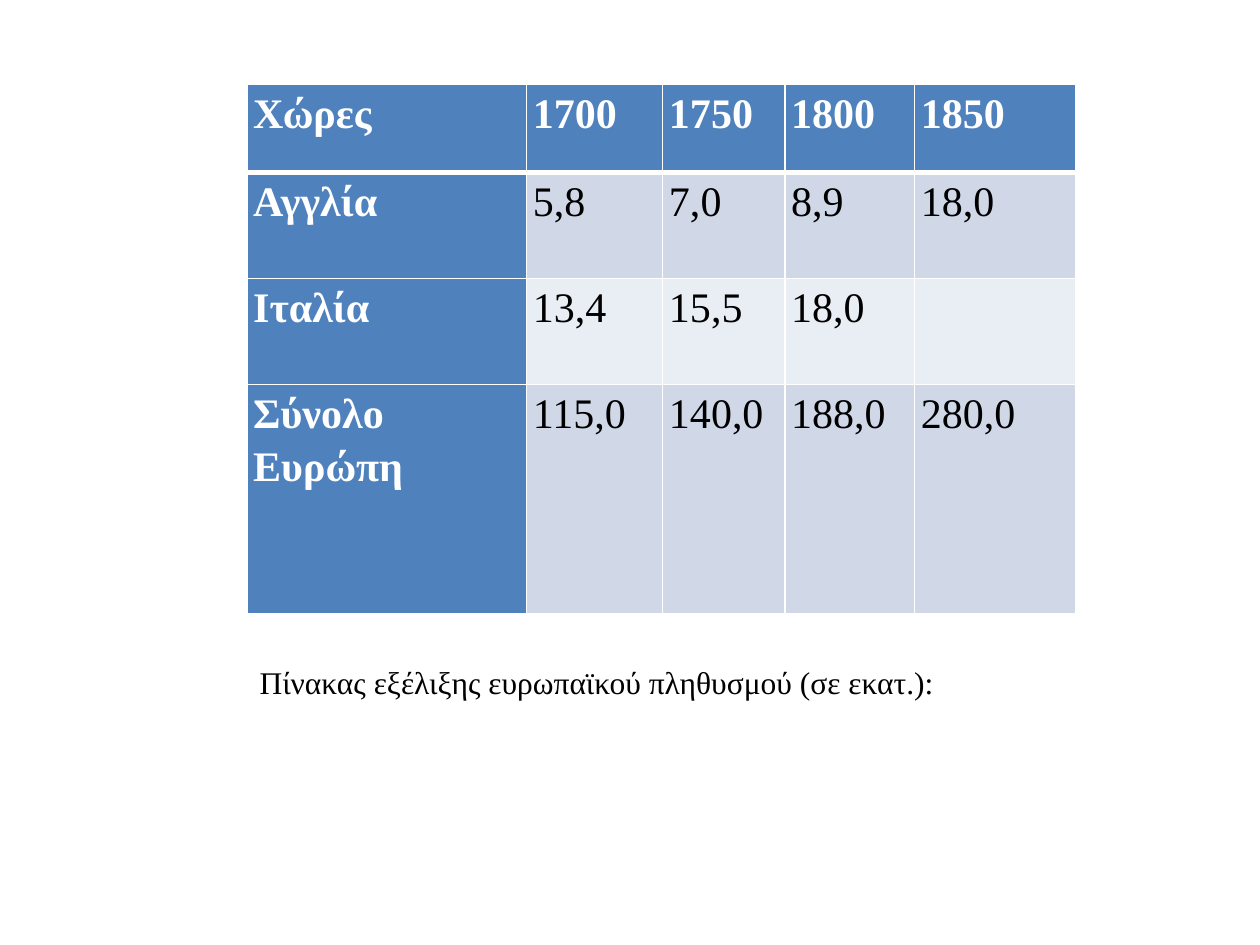
"""Build a slide with a table of European population from 1700 to 1850."""
import lxml.etree
import pptx
import pptx.dml.color
import pptx.enum.text
import pptx.oxml.ns
import pptx.util

Inches = pptx.util.Inches
Pt = pptx.util.Pt

COLORS = {
    "header": "4F81BD",
    "odd": "D0D8E8",
    "even": "E9EDF4",
    "light": "FFFFFF",
    "dark": "000000",
}
POPULATION = [
    ["Χώρες", "1700", "1750", "1800", "1850"],
    ["Αγγλία", "5,8", "7,0", "8,9", "18,0"],
    ["Ιταλία", "13,4", "15,5", "18,0", ""],
    ["Σύνολο Ευρώπη", "115,0", "140,0", "188,0", "280,0"],
]
COLUMN_WIDTHS = [2.22, 1.08, 0.97, 1.03, 1.28]
ROW_HEIGHTS = [0.7, 0.84, 0.84, 1.82]


class SlideBuilder:
    def __init__(self, slide, font_name="Times New Roman"):
        self.slide = slide
        self.font_name = font_name

    def color(self, key):
        return pptx.dml.color.RGBColor.from_string(COLORS[key])

    def format_font(self, paragraph, size, color, bold=False):
        font = paragraph.font
        font.name = self.font_name
        font.size = Pt(size)
        font.bold = bold
        font.color.rgb = self.color(color)

    def title(self, text, left, top, width, height):
        title = self.slide.shapes.title
        title.left, title.top = Inches(left), Inches(top)
        title.width, title.height = Inches(width), Inches(height)
        frame = title.text_frame
        frame.text = text
        frame.word_wrap = True
        frame.auto_size = pptx.enum.text.MSO_AUTO_SIZE.NONE
        frame.vertical_anchor = pptx.enum.text.MSO_ANCHOR.TOP
        frame.margin_top = Inches(0.01)
        caption = frame.paragraphs[0]
        caption.alignment = pptx.enum.text.PP_ALIGN.LEFT
        self.format_font(caption, 18, "dark")

    def border(self, cell, side, width):
        properties = cell._tc.get_or_add_tcPr()
        qn = pptx.oxml.ns.qn
        line = lxml.etree.SubElement(properties, qn(f"a:ln{side}"), w=str(Pt(width)))
        fill = lxml.etree.SubElement(line, qn("a:solidFill"))
        lxml.etree.SubElement(fill, qn("a:srgbClr"), val=COLORS["light"])

    def cell(self, cell, text, row, column):
        is_header = row == 0 or column == 0
        cell.text = text
        cell.margin_left = cell.margin_right = Inches(0.05)
        cell.margin_top = cell.margin_bottom = 0
        paragraph = cell.text_frame.paragraphs[0]
        paragraph.line_spacing = 1.15
        self.format_font(paragraph, 24, "light" if is_header else "dark", is_header)
        widths = {"L": 1, "R": 1, "T": 3 if row == 1 else 1, "B": 3 if row == 0 else 1}
        for side, width in widths.items():
            self.border(cell, side, width)
        cell.fill.solid()
        band = "odd" if row % 2 else "even"
        cell.fill.fore_color.rgb = self.color("header" if is_header else band)

    def table(self, rows, left, top, column_widths, row_heights):
        table = self.slide.shapes.add_table(
            len(rows), len(column_widths), Inches(left), Inches(top),
            Inches(sum(column_widths)), Inches(sum(row_heights)),
        ).table
        table.first_col = True
        for column, width in zip(table.columns, column_widths):
            column.width = Inches(width)
        for row, height in zip(table.rows, row_heights):
            row.height = Inches(height)
        for row, values in enumerate(rows):
            for column, value in enumerate(values):
                self.cell(table.cell(row, column), value, row, column)


def main():
    presentation = pptx.Presentation()
    presentation.slide_width = Inches(10)
    presentation.slide_height = Inches(7.5)
    title_only = presentation.slide_layouts[5]
    builder = SlideBuilder(presentation.slides.add_slide(title_only))
    builder.title("Πίνακας εξέλιξης ευρωπαϊκού πληθυσμού (σε εκατ.):", 1.96, 5.25, 6, 0.62)
    builder.table(POPULATION, 1.96, 0.67, COLUMN_WIDTHS, ROW_HEIGHTS)
    presentation.save("out.pptx")


if __name__ == "__main__":
    main()
